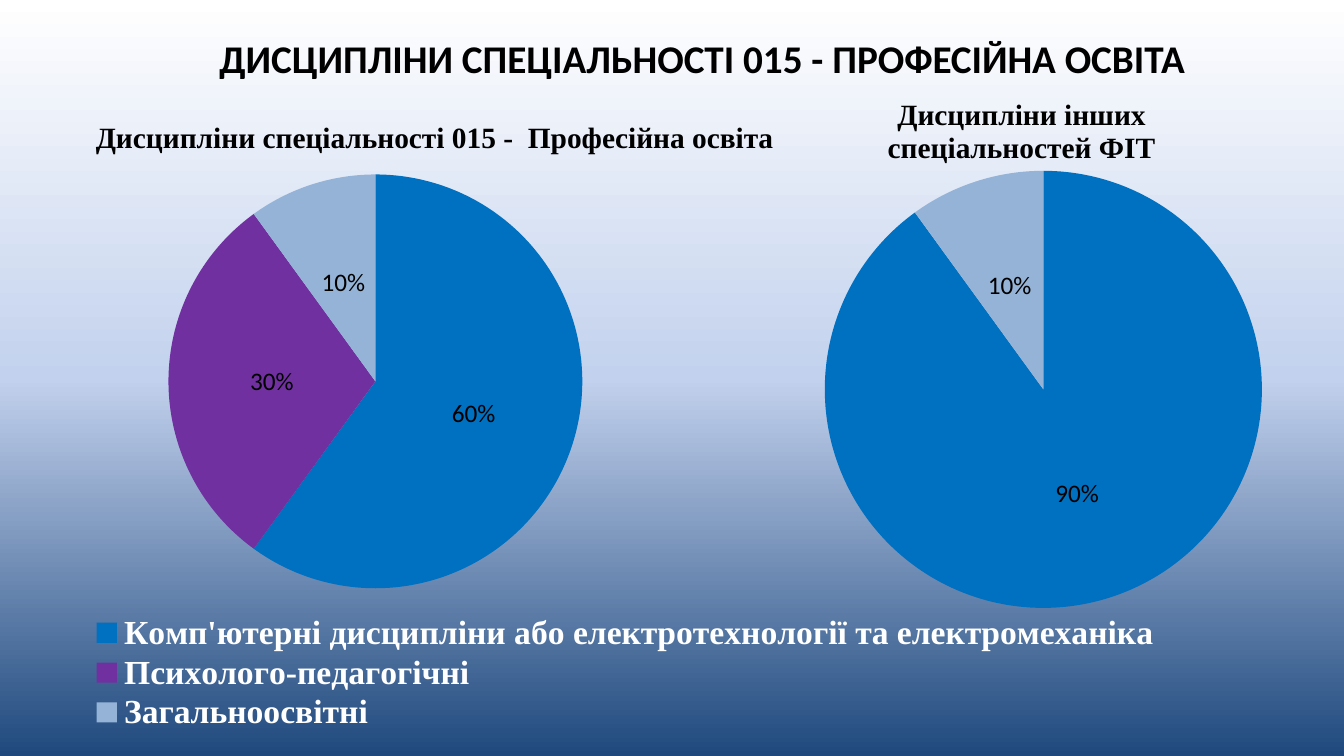
from pptx import Presentation
from pptx.chart.data import CategoryChartData
from pptx.dml.color import RGBColor
from pptx.enum.chart import XL_CHART_TYPE, XL_LABEL_POSITION, XL_LEGEND_POSITION
from pptx.enum.text import MSO_ANCHOR, PP_ALIGN
from pptx.oxml import parse_xml
from pptx.oxml.ns import nsdecls, qn
from pptx.util import Emu, Pt

COLORS = {"black": "000000", "white": "FFFFFF", "navy": "1F497D", "pale": "C2D1ED",
          "blue": "0070C0", "violet": "7030A0", "mist": "95B3D7"}
SANS, SERIF = "Calibri", "Times New Roman"


def px(n):
    return Emu(round(n * 914400 / 100.8))


def paint(font, name, size, color, bold=False):
    font.name, font.size, font.bold = name, Pt(size), bold
    font.color.rgb = RGBColor.from_string(COLORS[color])


def place(part, x, y, w=None, h=None, inner=False):
    """Give a chart part a manual layout, in fractions of the chart."""
    old = part.find(qn("c:layout"))
    if old is not None:
        part.remove(old)
    tags = '<c:layoutTarget val="inner"/>' if inner else ""
    tags += '<c:xMode val="edge"/><c:yMode val="edge"/>'
    for key, val in zip("xywh", (x, y, w, h)):
        if val is not None:
            tags += f'<c:{key} val="{val}"/>'
    layout = parse_xml(f'<c:layout {nsdecls("c")}><c:manualLayout>{tags}'
                       '</c:manualLayout></c:layout>')
    heads = [c for c in part if c.tag in (qn("c:tx"), qn("c:legendPos"))]
    part.insert(len(heads), layout)


class Deck:
    def __init__(self):
        self.prs = Presentation()
        self.prs.slide_width, self.prs.slide_height = px(1344), px(756)
        self.slide = self.prs.slides.add_slide(self.prs.slide_layouts[6])

    def backdrop(self, *names):
        """Blend the named colours evenly from bottom to top."""
        step = 100000 // (len(names) - 1)
        stops = "".join(f'<a:gs pos="{i * step}"><a:srgbClr val="{COLORS[n]}"/></a:gs>'
                        for i, n in enumerate(names))
        self.slide.element.cSld.insert(0, parse_xml(
            f'<p:bg {nsdecls("p", "a")}><p:bgPr><a:gradFill><a:gsLst>{stops}</a:gsLst>'
            '<a:lin ang="16200000" scaled="0"/></a:gradFill><a:effectLst/></p:bgPr></p:bg>'))

    def title(self, text, x, y, w, h):
        frame = self.slide.shapes.add_textbox(px(x), px(y), px(w), px(h)).text_frame
        frame.word_wrap = True
        frame.vertical_anchor = MSO_ANCHOR.MIDDLE
        frame.text = text
        line = frame.paragraphs[0]
        line.alignment = PP_ALIGN.CENTER
        paint(line.font, SANS, 28, "black", True)

    def pie(self, box, head, spot, plot, rows):
        """Draw a pie from rows of category, value and colour."""
        data = CategoryChartData(number_format="0%")
        data.categories = [row[0] for row in rows]
        data.add_series("Series 1", [row[1] for row in rows])
        chart = self.slide.shapes.add_chart(
            XL_CHART_TYPE.PIE, *map(px, box), data).chart
        paint(chart.font, SANS, 18, "black")
        root = chart.element.find(qn("c:chart"))
        root.addnext(parse_xml(f'<c:spPr {nsdecls("c", "a")}><a:noFill/>'
                               '<a:ln><a:noFill/></a:ln></c:spPr>'))
        chart.has_legend = False
        chart.has_title = True
        frame = chart.chart_title.text_frame
        frame.text = head
        for line in frame.paragraphs:
            line.alignment = PP_ALIGN.CENTER
            paint(line.font, SERIF, 21, "black", True)
        place(root.find(qn("c:title")), *spot)
        place(root.find(qn("c:plotArea")), *plot, inner=True)

        pie = chart.plots[0]
        pie.vary_by_categories = True
        for i, row in enumerate(rows):
            fill = pie.series[0].points[i].format.fill
            fill.solid()
            fill.fore_color.rgb = RGBColor.from_string(COLORS[row[2]])
        pie.has_data_labels = True
        labels = pie.data_labels
        labels.show_value, labels.show_percentage = True, False
        labels.number_format, labels.number_format_is_linked = "0%", False
        labels.position = XL_LABEL_POSITION.CENTER
        paint(labels.font, SANS, 18, "black")
        return chart

    def legend(self, chart, *spot):
        chart.has_legend = True
        key = chart.legend
        key.position = XL_LEGEND_POSITION.BOTTOM
        key.include_in_layout = False
        paint(key.font, SERIF, 24, "white", True)
        place(chart.element.find(qn("c:chart")).find(qn("c:legend")), *spot)


def main():
    deck = Deck()
    deck.backdrop("navy", "pale", "white")
    major = deck.pie(
        (67, 66, 1175, 674), "Дисципліни спеціальності 015 -  Професійна освіта",
        (0.02, 0.07), (0.086, 0.161, 0.353, 0.614),
        [("Комп'ютерні дисципліни або електротехнології та електромеханіка", 0.6, "blue"),
         ("Психолого-педагогічні", 0.3, "violet"),
         ("Загальноосвітні", 0.1, "mist")])
    deck.legend(major, 0.01, 0.81, 0.93, 0.18)
    deck.pie((669, 74, 674, 682), "Дисципліни інших\nспеціальностей ФІТ",
             (0.32, 0.03), (0.116, 0.142, 0.879, 0.641),
             [("1", 0.9, "blue"), ("2", 0.1, "mist")])
    deck.title("ДИСЦИПЛІНИ СПЕЦІАЛЬНОСТІ 015 - ПРОФЕСІЙНА ОСВІТА", 60, 13, 1284, 90)
    deck.prs.save("out.pptx")


if __name__ == "__main__":
    main()
